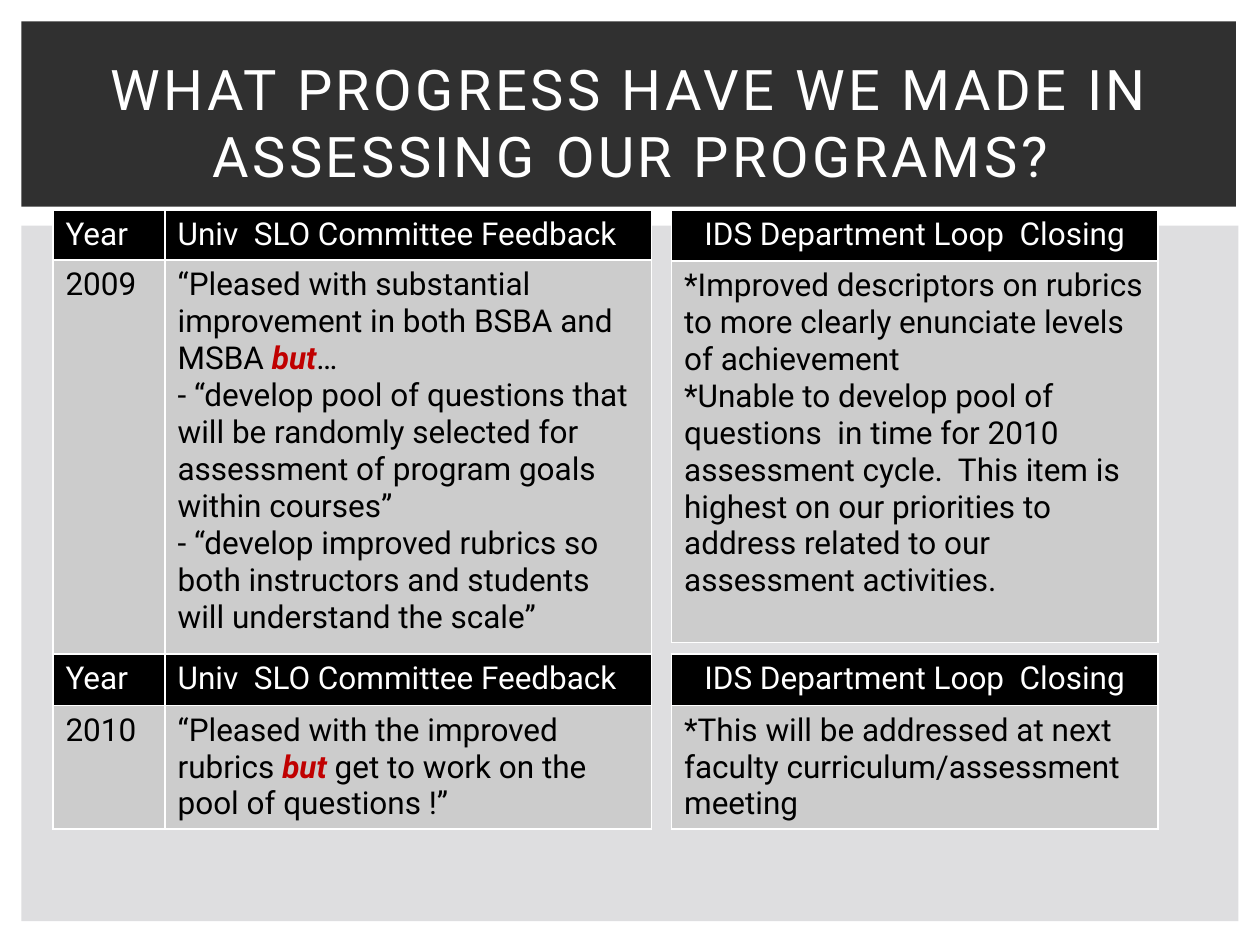
from lxml.etree import SubElement
from pptx import Presentation
from pptx.dml.color import RGBColor
from pptx.enum.shapes import MSO_SHAPE
from pptx.enum.text import MSO_ANCHOR, MSO_AUTO_SIZE, PP_ALIGN
from pptx.oxml.ns import qn
from pptx.util import Inches, Pt

WHITE, BLACK, RED = "FFFFFF", "000000", "C00000"
CELL_GRAY = "CCCCCC"
EMPHASIS = "but"


def color(hex_string):
    return RGBColor.from_string(hex_string)


def write(frame, paragraphs, size=18, font_color=BLACK, align=PP_ALIGN.LEFT, spacing=None):
    """Fill a text frame; each paragraph is a list of runs, with EMPHASIS in red."""
    for index, runs in enumerate(paragraphs):
        paragraph = frame.add_paragraph() if index else frame.paragraphs[0]
        paragraph.alignment = align
        for text in runs:
            run = paragraph.add_run()
            run.text = text
            emphasized = text == EMPHASIS
            run.font.name = "Roboto"
            run.font.size = Pt(size)
            run.font.bold = run.font.italic = emphasized
            run.font.color.rgb = color(RED if emphasized else font_color)
            if spacing:
                run.font._element.set("spc", str(spacing * 100))


presentation = Presentation()
presentation.slide_width, presentation.slide_height = Inches(10), Inches(7.5)
slide = presentation.slides.add_slide(presentation.slide_layouts[5])

# Background panels, placed behind the title
panels = [
    (0.17, 1.79, 9.66, 5.52, "DEDEE0"),
    (0.17, 0.17, 9.64, 1.47, "303030"),
]
for position, (*box, fill) in enumerate(panels):
    panel = slide.shapes.add_shape(MSO_SHAPE.RECTANGLE, *map(Inches, box))
    panel.shadow.inherit = False
    panel.fill.solid()
    panel.fill.fore_color.rgb = color(fill)
    panel.line.fill.background()
    slide.shapes._spTree.insert(2 + position, panel._element)

title = slide.shapes.title
title.left, title.top, title.width, title.height = map(Inches, (0.42, 0.39, 9.17, 1.15))
title.text_frame.word_wrap = True
title.text_frame.auto_size = MSO_AUTO_SIZE.NONE
title.text_frame.vertical_anchor = MSO_ANCHOR.MIDDLE
write(title.text_frame, [["WHAT PROGRESS HAVE WE MADE IN ASSESSING OUR PROGRAMS?"]],
      size=32, font_color=WHITE, align=PP_ALIGN.CENTER, spacing=2)

# Feedback tables on the left, department responses on the right
LEFT, RIGHT = 0.42, 5.33
FIRST_YEAR, SECOND_YEAR = 1.67, 5.19
YEAR_WIDTH, TEXT_WIDTH = 0.89, 3.86
feedback_columns, response_columns = [YEAR_WIDTH, TEXT_WIDTH], [TEXT_WIDTH]
feedback_header = ["Year", "Univ  SLO Committee Feedback"]
response_header = ["IDS Department Loop  Closing"]

feedback_2009 = [
    ["“Pleased with substantial improvement in both BSBA and MSBA ", EMPHASIS, "…"],
    ["- “develop pool of questions that will be randomly selected for assessment "
     "of program goals within courses”"],
    ["- “develop improved rubrics so both instructors and students will understand the scale”"],
]
response_2009 = [
    ["*Improved descriptors on rubrics to more clearly enunciate levels of achievement"],
    ["*Unable to develop pool of questions  in time for 2010 assessment cycle.  This item is "
     "highest on our priorities to address related to our assessment activities."],
]
feedback_2010 = [
    ["“Pleased with the improved rubrics ", EMPHASIS, " get to work on the pool of questions !”"],
]
response_2010 = [["*This will be addressed at next faculty curriculum/assessment meeting"]]

tables = [
    (LEFT, FIRST_YEAR, feedback_columns, [0.39, 3.13], feedback_header,
     [[["2009"]], feedback_2009]),
    (RIGHT, FIRST_YEAR, response_columns, [0.4, 3.03], response_header, [response_2009]),
    (LEFT, SECOND_YEAR, feedback_columns, [0.41, 0.98], feedback_header,
     [[["2010"]], feedback_2010]),
    (RIGHT, SECOND_YEAR, response_columns, [0.41, 0.98], response_header, [response_2010]),
]
for left, top, widths, heights, header, body in tables:
    table = slide.shapes.add_table(
        len(heights), len(widths), Inches(left), Inches(top),
        Inches(sum(widths)), Inches(sum(heights))).table
    table.first_row = table.horz_banding = False
    for column, width in zip(table.columns, widths):
        column.width = Inches(width)
    for row, height in zip(table.rows, heights):
        row.height = Inches(height)

    header_align = PP_ALIGN.CENTER if header == response_header else PP_ALIGN.LEFT
    for index, (heading, content) in enumerate(zip(header, body)):
        header_cell, body_cell = table.cell(0, index), table.cell(1, index)
        write(header_cell.text_frame, [[heading]], font_color=WHITE, align=header_align)
        write(body_cell.text_frame, content)
        for cell, fill in ((header_cell, BLACK), (body_cell, CELL_GRAY)):
            properties = cell._tc.get_or_add_tcPr()
            for side in ("lnL", "lnR", "lnT", "lnB"):
                border = SubElement(properties, qn(f"a:{side}"), w=str(Pt(1)))
                border_fill = SubElement(border, qn("a:solidFill"))
                SubElement(border_fill, qn("a:srgbClr"), val=WHITE)
            cell.fill.solid()
            cell.fill.fore_color.rgb = color(fill)

presentation.save("out.pptx")
